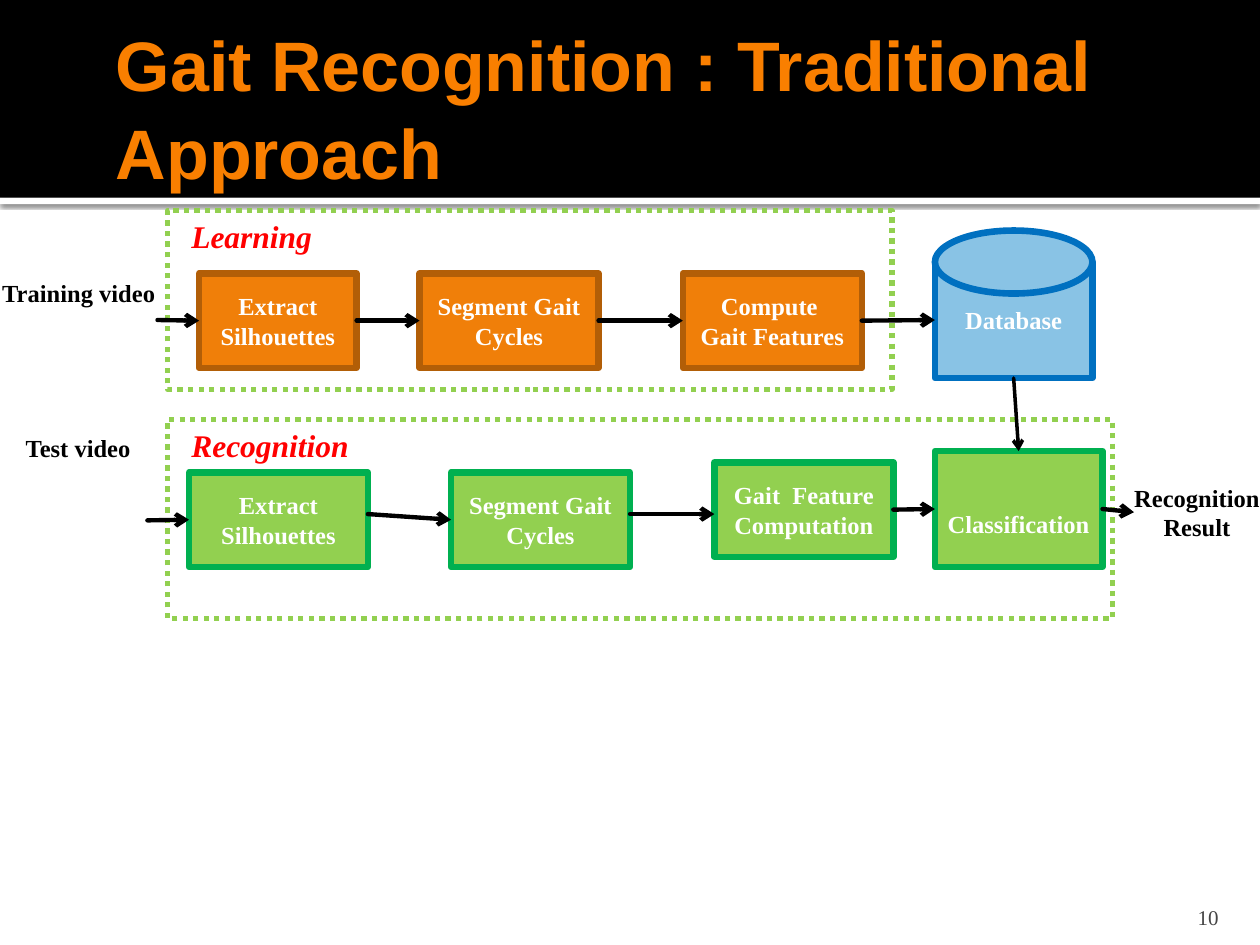
from typing import NamedTuple, Optional

from lxml.etree import SubElement
from pptx import Presentation
from pptx.dml.color import RGBColor
from pptx.enum.dml import MSO_LINE
from pptx.enum.shapes import MSO_CONNECTOR, MSO_SHAPE
from pptx.enum.text import MSO_ANCHOR as Anchor, PP_ALIGN as Align
from pptx.oxml.ns import qn
from pptx.util import Inches, Pt

BLACK = RGBColor(0x00, 0x00, 0x00)
WHITE = RGBColor(0xFF, 0xFF, 0xFF)
GRAY = RGBColor(0x45, 0x45, 0x45)
RED = RGBColor(0xFF, 0x00, 0x00)
TITLE_ORANGE = RGBColor(0xF9, 0x7F, 0x00)
ORANGE = RGBColor(0xF0, 0x7F, 0x09)
BROWN = RGBColor(0xB2, 0x5E, 0x07)
LIME = RGBColor(0x92, 0xD0, 0x50)
GREEN = RGBColor(0x00, 0xB0, 0x50)
SKY = RGBColor(0x89, 0xC3, 0xE5)
BLUE = RGBColor(0x00, 0x70, 0xC0)
SERIF = "Times New Roman"
TOP, LEFT, BOTTOM, RIGHT = range(4)


class Area(NamedTuple):
    left: float
    top: float
    width: float
    height: float


class Step(NamedTuple):
    name: str
    text: str
    area: Area
    fill: RGBColor
    line: RGBColor


class Label(NamedTuple):
    name: str
    text: str
    area: Area


class Joint(NamedTuple):
    name: str
    side: int


class Arrow(NamedTuple):
    start: tuple[float, float]
    end: tuple[float, float]
    begin_joint: Optional[Joint] = None
    end_joint: Optional[Joint] = None
    weight: float = 2.5


STEPS = [
    Step("learn extract", "Extract Silhouettes", Area(1.58, 2.17, 1.25, 0.75), ORANGE, BROWN),
    Step("learn segment", "Segment Gait Cycles", Area(3.33, 2.17, 1.42, 0.75), ORANGE, BROWN),
    Step("learn features", "Compute  Gait Features", Area(5.42, 2.17, 1.42, 0.75), ORANGE, BROWN),
    Step("database", "Database", Area(7.42, 2.08, 1.25, 0.92), SKY, BLUE),
    Step("test extract", "Extract Silhouettes", Area(1.5, 3.75, 1.42, 0.75), LIME, GREEN),
    Step("test segment", "Segment Gait Cycles", Area(3.58, 3.75, 1.42, 0.75), LIME, GREEN),
    Step("test features", "Gait  Feature Computation", Area(5.67, 3.67, 1.42, 0.75), LIME, GREEN),
    Step("classify", " Classification", Area(7.42, 3.58, 1.33, 0.92), LIME, GREEN),
]
LABELS = [
    Label("training", "Training video", Area(0, 2.21, 1.25, 0.24)),
    Label("test", "Test video", Area(0.08, 3.44, 1.08, 0.24)),
    Label("result", "Recognition Result", Area(9, 3.83, 1, 0.47)),
]
STAGES = [
    Label("learning", "Learning", Area(1.33, 1.67, 5.75, 1.42)),
    Label("recognition", "Recognition", Area(1.33, 3.33, 7.5, 1.58)),
]
ARROWS = [
    Arrow((1.25, 2.54), (1.58, 2.54), None, Joint("learn extract", LEFT)),
    Arrow((2.83, 2.54), (3.33, 2.54), Joint("learn extract", RIGHT), Joint("learn segment", LEFT)),
    Arrow((4.75, 2.54), (5.42, 2.54), Joint("learn segment", RIGHT), Joint("learn features", LEFT)),
    Arrow((6.83, 2.54), (7.42, 2.54), Joint("learn features", RIGHT), Joint("database", LEFT)),
    Arrow((8.04, 3), (8.08, 3.58), Joint("database", BOTTOM), Joint("classify", TOP), 2),
    Arrow((1.17, 4.13), (1.5, 4.12), None, Joint("test extract", LEFT)),
    Arrow((2.92, 4.08), (3.58, 4.12), None, Joint("test segment", LEFT)),
    Arrow((5, 4.08), (5.67, 4.08)),
    Arrow((7.08, 4.04), (7.42, 4.04), Joint("test features", RIGHT), Joint("classify", LEFT)),
    Arrow((8.75, 4.04), (9, 4.07), Joint("classify", RIGHT), Joint("result", LEFT)),
]


def lengths(area: Area) -> list:
    return [Inches(value) for value in area]


def write(box, text: str, *, size: float = 14, font: str = SERIF, color=WHITE, bold=True,
          italic=False, align=Align.CENTER, anchor=Anchor.MIDDLE, wrap=True,
          insets=(0.1, 0.05, 0.1, 0.05), spacing: float = 1.0) -> None:
    frame = box.text_frame
    frame.word_wrap = wrap
    frame.vertical_anchor = anchor
    frame.margin_left, frame.margin_top, frame.margin_right, frame.margin_bottom = map(Inches, insets)
    para = frame.paragraphs[0]
    para.alignment = align
    para.line_spacing = spacing
    span = para.add_run()
    span.text = text
    span.font.size = Pt(size)
    span.font.name = font
    span.font.bold = bold
    span.font.italic = italic
    span.font.color.rgb = color


def draw_shape(page, kind, area: Area, fill=None, line=None, weight=3.78, dash=None):
    shape = page.shapes.add_shape(kind, *lengths(area))
    shape.shadow.inherit = False
    if fill is None:
        shape.fill.background()
    else:
        shape.fill.solid()
        shape.fill.fore_color.rgb = fill
    if line is None:
        shape.line.fill.background()
    else:
        shape.line.color.rgb = line
        shape.line.width = Pt(weight)
        if dash is not None:
            shape.line.dash_style = dash
        SubElement(shape.line._get_or_add_ln(), qn("a:round"))
    return shape


def draw_text(page, area: Area, text: str, **style):
    box = page.shapes.add_textbox(*lengths(area))
    write(box, text, **style)
    return box


def draw_arrow(page, arrow: Arrow, nodes: dict) -> None:
    points = [Inches(value) for value in (*arrow.start, *arrow.end)]
    link = page.shapes.add_connector(MSO_CONNECTOR.STRAIGHT, *points)
    if arrow.begin_joint:
        link.begin_connect(nodes[arrow.begin_joint.name], arrow.begin_joint.side)
    if arrow.end_joint:
        link.end_connect(nodes[arrow.end_joint.name], arrow.end_joint.side)
    link.line.color.rgb = BLACK
    link.line.width = Pt(arrow.weight)
    line = link.line._get_or_add_ln()
    line.set("cap", "rnd")
    SubElement(line, qn("a:round"))
    SubElement(line, qn("a:tailEnd"), type="arrow")
    SubElement(link.element.spPr, qn("a:effectLst"))


def draw_header(page) -> None:
    strip = draw_shape(page, MSO_SHAPE.RECTANGLE, Area(0, 1.57, 10, 0.05), WHITE)
    effects = strip.element.spPr.find(qn("a:effectLst"))
    shadow = SubElement(effects, qn("a:outerShdw"), blurRad=str(Pt(2.5)),
                        dist=str(Pt(0.8)), dir="5400000", algn="tl", rotWithShape="0")
    tint = SubElement(shadow, qn("a:srgbClr"), val=str(BLACK))
    SubElement(tint, qn("a:alpha"), val="60000")
    draw_shape(page, MSO_SHAPE.RECTANGLE, Area(0, 0, 10, 1.57), BLACK)
    title = page.shapes.title
    title.left, title.top, title.width, title.height = lengths(Area(0.82, 0.25, 8.77, 1.17))
    write(title, "Gait Recognition : Traditional Approach", size=40, font="Arial",
          color=TITLE_ORANGE, align=Align.LEFT, insets=(0.1, 0.05, 0.05, 0.05), spacing=1.05)
    title.element.getparent().append(title.element)


def main() -> None:
    deck = Presentation()
    deck.slide_width, deck.slide_height = Inches(10), Inches(7.5)
    page = deck.slides.add_slide(deck.slide_layouts[5])
    draw_header(page)
    draw_text(page, Area(8.97, 7.08, 0.8, 0.3), "10", size=12, color=GRAY, bold=False,
              align=Align.RIGHT, anchor=Anchor.BOTTOM, insets=(0.1, 0.05, 0.1, 0))
    nodes = {}
    for step in STEPS:
        nodes[step.name] = draw_shape(page, MSO_SHAPE.RECTANGLE, step.area, step.fill, step.line)
        write(nodes[step.name], step.text)
    draw_shape(page, MSO_SHAPE.OVAL, Area(7.42, 1.83, 1.25, 0.5), SKY, BLUE)
    for stage in STAGES:
        draw_shape(page, MSO_SHAPE.RECTANGLE, stage.area, None, LIME, 3, MSO_LINE.ROUND_DOT)
        corner = Area(stage.area.left + 0.09, stage.area.top, 1.49, 0.4)
        draw_text(page, corner, stage.text, size=18, color=RED, italic=True,
                  align=Align.LEFT, anchor=Anchor.TOP, wrap=False)
    for label in LABELS:
        nodes[label.name] = draw_text(page, label.area, label.text, color=BLACK,
                                      anchor=Anchor.TOP, insets=(0, 0, 0, 0))
    for arrow in ARROWS:
        draw_arrow(page, arrow, nodes)
    deck.save("out.pptx")


if __name__ == "__main__":
    main()
